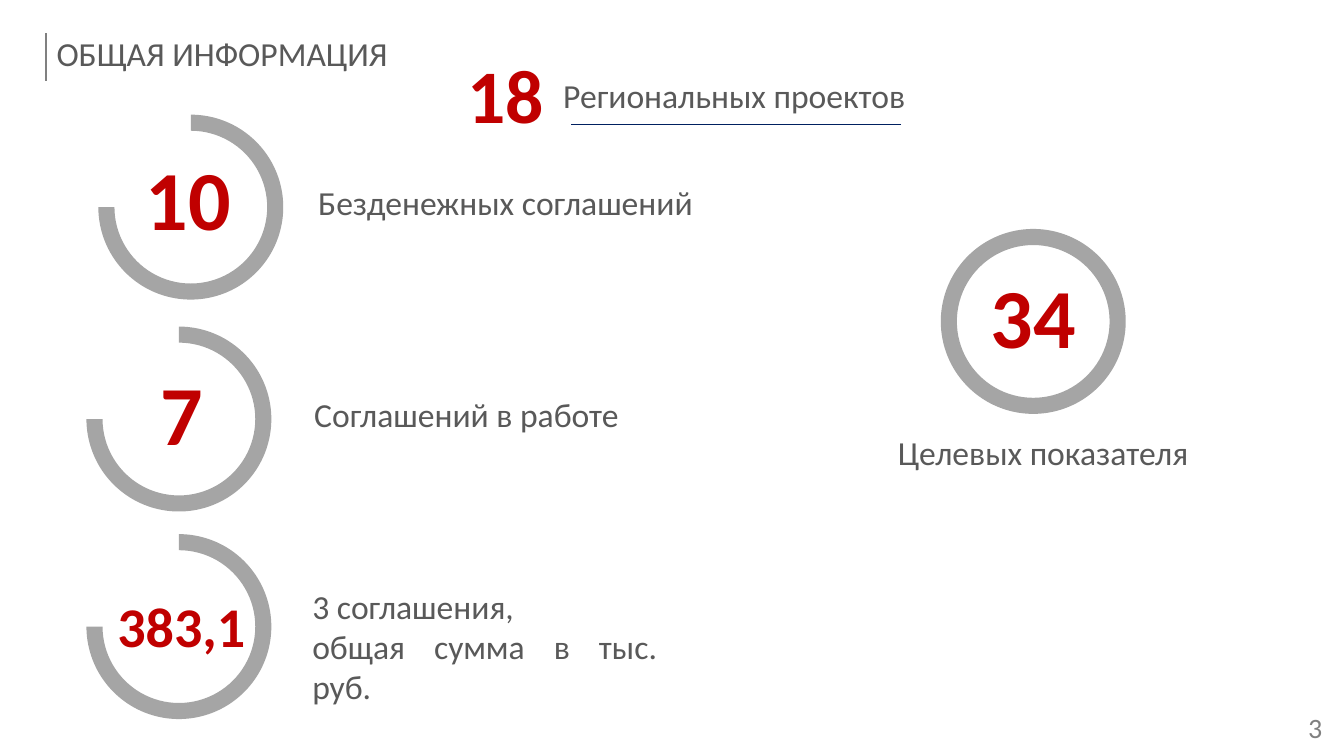
from lxml.etree import SubElement
from pptx import Presentation
from pptx.dml.color import RGBColor
from pptx.enum.shapes import MSO_CONNECTOR as Link, MSO_SHAPE as Form
from pptx.enum.text import MSO_ANCHOR as Anchor, PP_ALIGN as Align
from pptx.oxml.ns import qn
from pptx.util import Cm, Pt

FONT = "Calibri"
RED, DARK, GREY, RING, NAVY = "C00000", "595959", "808080", "A5A5A5", "002060"

TITLE = "ОБЩАЯ ИНФОРМАЦИЯ"
PAGE = "3"
TOTAL = ("18", "Региональных проектов")

# value, size, ring centre, value centre, label lines, label left, top, width, full ring
COUNTS = [
    ("10", 60, (4.81, 5.22), (4.75, 4.97),
     ["Безденежных соглашений"], (7.77, 4.45, 10.2), False),
    ("7", 60, (4.51, 10.56), (4.57, 10.38),
     ["Соглашений в работе"], (7.67, 9.8, 8.6), False),
    ("383,1", 40, (4.51, 15.79), (4.57, 15.74),
     ["3 соглашения,", "общая сумма в тыс. руб."], (7.62, 14.63, 9.19), False),
    ("34", 60, (26.04, 8.1), (26.04, 7.94),
     ["Целевых показателя"], (22.38, 10.77, 8.6), True),
]
RING_SIZE, BAND = 4.66, 0.087
NUM_W, NUM_H = 6.25, 2.82
LABEL_H = 1.27


def rgb(code):
    return RGBColor.from_string(code)


def style(para, size, color, align, bold=False):
    para.alignment = align
    font = para.font
    font.name, font.size, font.bold = FONT, Pt(size), bold
    font.color.rgb = rgb(color)


def text(box, lines, size, color, align=Align.LEFT, anchor=Anchor.TOP, bold=False):
    frame = slide.shapes.add_textbox(*map(Cm, box)).text_frame
    frame.word_wrap = True
    frame.vertical_anchor = anchor
    frame.text = "\n".join(lines)
    for para in frame.paragraphs:
        style(para, size, color, align, bold)


def rule(x1, y1, x2, y2, color, width):
    line = slide.shapes.add_connector(Link.STRAIGHT, *map(Cm, (x1, y1, x2, y2)))
    line.line.color.rgb = rgb(color)
    line.line.width = Pt(width)
    SubElement(line._element.spPr, qn("a:effectLst"))


def ring(x, y, full):
    """Draw a ring centred on x, y; an open one lacks its upper left quarter."""
    half = RING_SIZE / 2
    form = Form.DONUT if full else Form.BLOCK_ARC
    shape = slide.shapes.add_shape(
        form, Cm(x - half), Cm(y - half), Cm(RING_SIZE), Cm(RING_SIZE))
    # Angles are in 60000ths of a degree, scaled by 100000
    values = [BAND] if full else [270 * 0.6, 180 * 0.6, BAND]
    for i, value in enumerate(values):
        shape.adjustments[i] = value
    shape.fill.solid()
    shape.fill.fore_color.rgb = rgb(RING)
    shape.line.fill.background()
    shape.shadow.inherit = False


deck = Presentation()
deck.slide_width, deck.slide_height = Cm(33.87), Cm(19.05)
slide = deck.slides.add_slide(deck.slide_layouts[5])

title = slide.shapes.title
title.left, title.top, title.width, title.height = map(Cm, (1.17, 0.58, 32, 1.7))
title.text_frame.text = TITLE
title.text_frame.vertical_anchor = Anchor.MIDDLE
head = title.text_frame.paragraphs[0]
style(head, 24, DARK, Align.LEFT)
head.line_spacing = 0.8
rule(1.17, 0.84, 1.17, 2.03, GREY, 1.5)

number, name = TOTAL
text((8.99, 0.41, 7.52, 3.22), [number], 54, RED, Align.CENTER, Anchor.BOTTOM, True)
text((13.31, 1.7, 10.39, 1.32), [name], 24, DARK, Align.CENTER, Anchor.BOTTOM)
rule(22.71, 3.12, 14.4, 3.12, NAVY, 0.25)

for value, size, hub, (x, y), label, (left, top, width), full in COUNTS:
    ring(*hub, full)
    text((x - NUM_W / 2, y - NUM_H / 2, NUM_W, NUM_H), [value], size, RED,
         Align.CENTER, Anchor.MIDDLE, True)
    text((left, top, width, LABEL_H * len(label)), label, 24, DARK, Align.JUSTIFY)

text((32.72, 17.78, 1.15, 1.12), [PAGE], 20, GREY)

deck.save("out.pptx")
